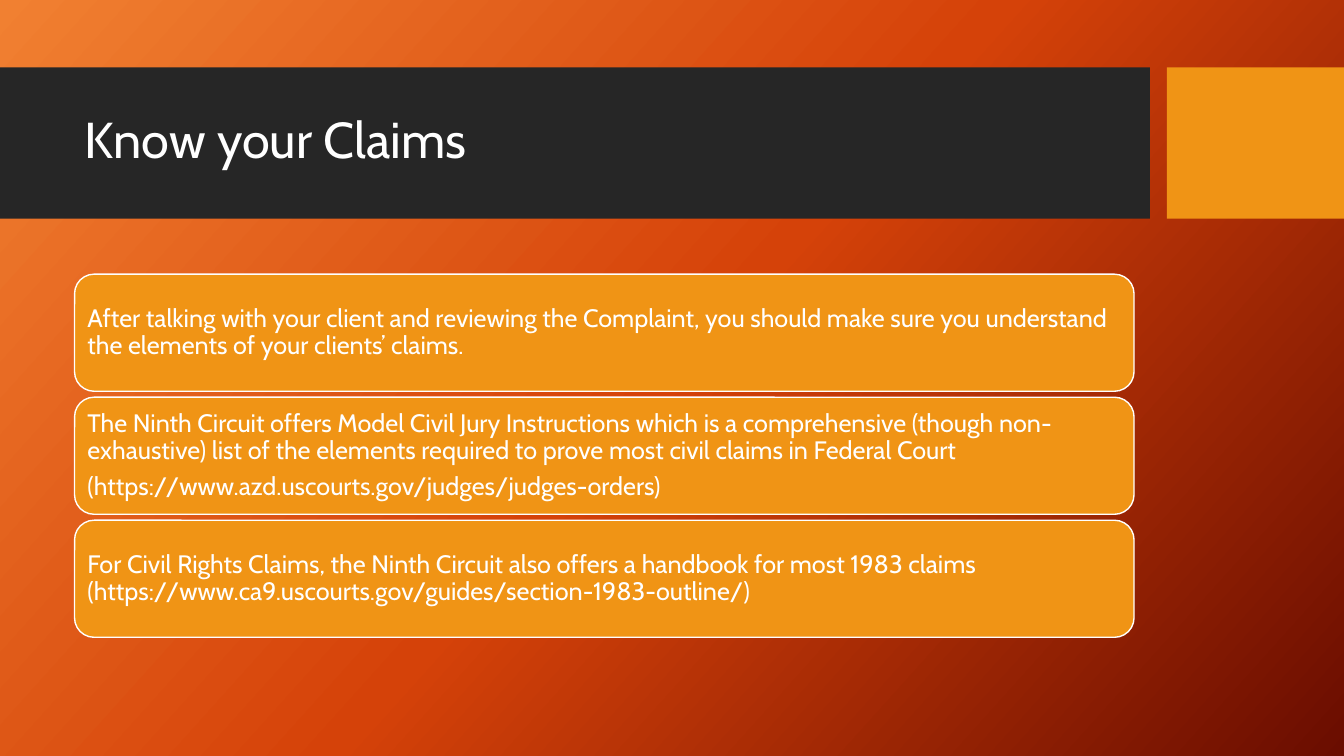
"""Build the "Know your Claims" slide."""
from copy import deepcopy
from dataclasses import dataclass

from pptx import Presentation
from pptx.dml.color import RGBColor
from pptx.enum.shapes import MSO_SHAPE
from pptx.enum.text import MSO_ANCHOR, MSO_AUTO_SIZE, PP_ALIGN
from pptx.shapes.autoshape import Shape
from pptx.slide import Slide
from pptx.text.text import TextFrame
from pptx.util import Cm, Pt

RECTANGLE = MSO_SHAPE.RECTANGLE
ROUNDED = MSO_SHAPE.ROUNDED_RECTANGLE
MIDDLE = MSO_ANCHOR.MIDDLE
NO_AUTOFIT = MSO_AUTO_SIZE.NONE
LEFT = PP_ALIGN.LEFT

COLOURS = {
    "band": "262626",
    "accent": "F09415",
    "text": "FFFFFF",
    "start": "F18031",
    "middle": "D54209",
    "end": "6A0D00",
}
GRADIENT = {"start": 0.0, "middle": 0.5, "end": 1.0}
GRADIENT_ANGLE = 318

FONT = "Cabin"
MARGIN_LEFT = 1.88
CONTENT_WIDTH = 26.7
CARD_TOP = 6.91
CARD_HEIGHT = 2.95
CARD_PITCH = 3.1

FRAME_FORMAT = {"word_wrap": True, "auto_size": NO_AUTOFIT, "vertical_anchor": MIDDLE}
CARD_INSETS = {
    f"margin_{side}": Cm(0.18) for side in ("left", "top", "right", "bottom")
}
TITLE_PARAGRAPH = {"alignment": LEFT, "line_spacing": 0.9}
CARD_PARAGRAPH = TITLE_PARAGRAPH | {"space_before": Pt(0), "space_after": Pt(6.3)}

CARD_TEXTS = [
    [
        "After talking with your client and reviewing the Complaint, you should "
        "make sure you understand the elements of your clients’ claims."
    ],
    [
        "The Ninth Circuit offers Model Civil Jury Instructions which is a "
        "comprehensive (though non-exhaustive) list of the elements required to "
        "prove most civil claims in Federal Court",
        "(https://www.azd.uscourts.gov/judges/judges-orders)",
    ],
    [
        "For Civil Rights Claims, the Ninth Circuit also offers a handbook for "
        "most 1983 claims (https://www.ca9.uscourts.gov/guides/section-1983-outline/)"
    ],
]


@dataclass(frozen=True)
class Box:
    """A filled area, measured in centimetres."""

    left: float
    top: float
    width: float
    height: float
    colour: str = "accent"
    outline: str | None = None
    kind: MSO_SHAPE = RECTANGLE


BANDS = [Box(0, 1.7, 28.98, 3.81, "band"), Box(29.41, 1.7, 4.46, 3.81)]
TITLE_AREA = Box(MARGIN_LEFT, 2.08, CONTENT_WIDTH, 3)


def colour(name: str) -> RGBColor:
    """Look up a named colour."""
    return RGBColor.from_string(COLOURS[name])


def apply(target: object, values: dict) -> None:
    """Set each attribute from a dict of format values."""
    for name, value in values.items():
        setattr(target, name, value)


def place(box: Box) -> dict:
    """Give the position and size of a box as shape attributes."""
    return {name: Cm(getattr(box, name)) for name in ("left", "top", "width", "height")}


def draw_box(page: Slide, box: Box) -> Shape:
    """Draw one filled box."""
    shape = page.shapes.add_shape(box.kind, **place(box))
    shape.shadow.inherit = False
    shape.fill.solid()
    shape.fill.fore_color.rgb = colour(box.colour)
    if box.outline:
        shape.line.color.rgb = colour(box.outline)
        shape.line.width = Pt(1)
    else:
        shape.line.fill.background()
    return shape


def write(frame: TextFrame, texts: list[str], size: float, para_format: dict) -> None:
    """Fill a text frame with one paragraph for each text."""
    apply(frame, FRAME_FORMAT)
    frame.text = "\n".join(texts)
    for para in frame.paragraphs:
        apply(para, para_format)
        apply(para.font, {"name": FONT, "size": Pt(size)})
        para.font.color.rgb = colour("text")


def paint_background(page: Slide) -> None:
    """Fill the page with the three-stop gradient."""
    fill = page.background.fill
    fill.gradient()
    fill.gradient_angle = GRADIENT_ANGLE
    stop_list = page.element.xpath(".//a:gsLst")[0]
    stop_list.append(deepcopy(stop_list[0]))
    for stop, (name, position) in zip(fill.gradient_stops, GRADIENT.items()):
        stop.color.rgb = colour(name)
        stop.position = position


def main() -> None:
    """Build and save the deck."""
    deck = Presentation()
    apply(deck, {"slide_width": Cm(33.87), "slide_height": Cm(19.05)})
    page = deck.slides.add_slide(deck.slide_layouts.get_by_name("Title Only"))
    paint_background(page)

    title = page.shapes.title
    apply(title, place(TITLE_AREA))
    write(title.text_frame, ["Know your Claims"], 36, TITLE_PARAGRAPH)
    for band in BANDS:
        title.element.addprevious(draw_box(page, band).element)

    for row, texts in enumerate(CARD_TEXTS):
        top = CARD_TOP + row * CARD_PITCH
        card = Box(MARGIN_LEFT, top, CONTENT_WIDTH, CARD_HEIGHT, outline="text", kind=ROUNDED)
        frame = draw_box(page, card).text_frame
        apply(frame, CARD_INSETS)
        write(frame, texts, 18, CARD_PARAGRAPH)

    deck.save("out.pptx")


if __name__ == "__main__":
    main()
